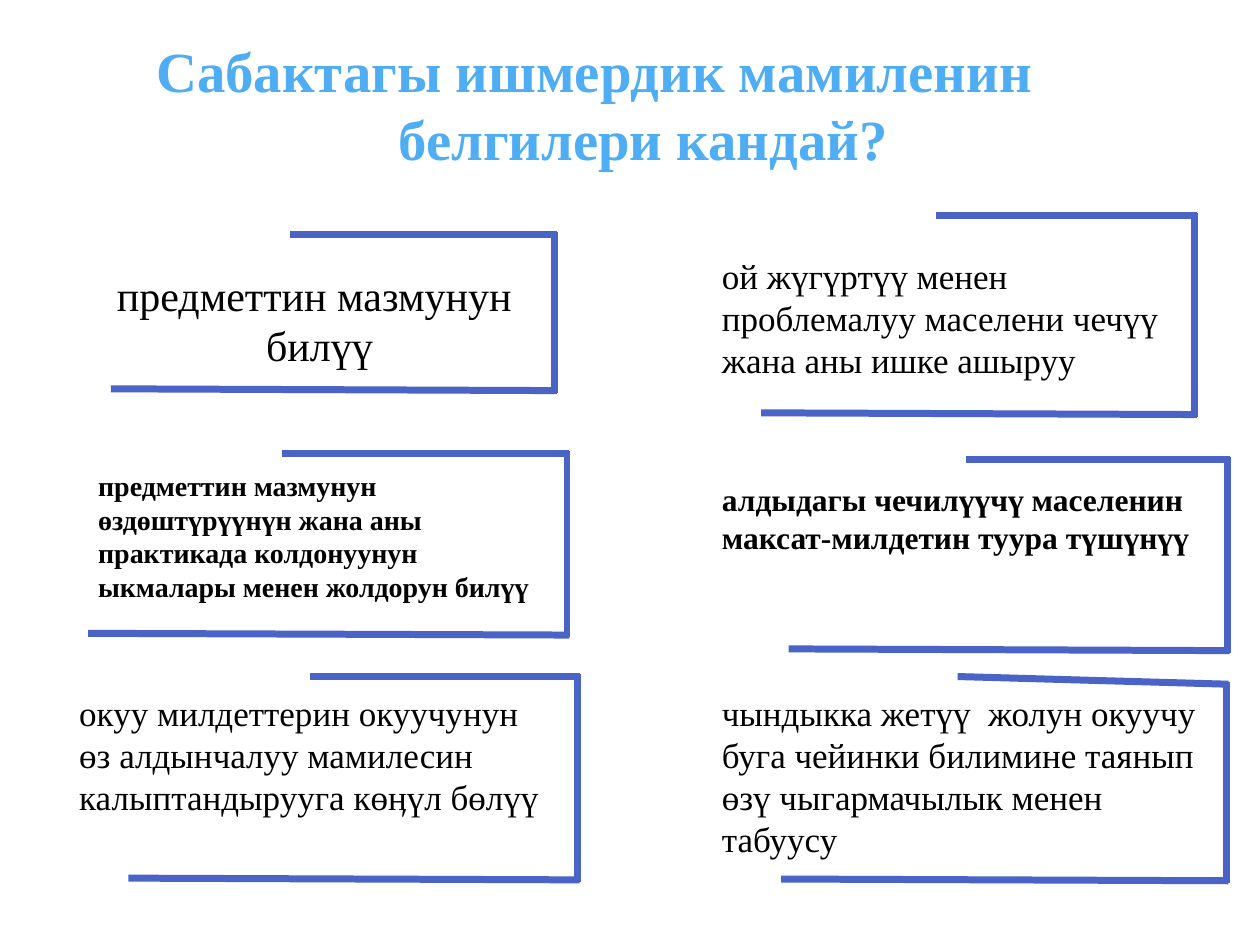
import pptx
import pptx.dml.color
import pptx.enum.shapes
import pptx.enum.text
import pptx.oxml
import pptx.oxml.ns
import pptx.util

Pt = pptx.util.Pt
RGB = pptx.dml.color.RGBColor
ALIGN = pptx.enum.text.PP_ALIGN
ANCHOR = pptx.enum.text.MSO_ANCHOR
FIT = pptx.enum.text.MSO_AUTO_SIZE

SKY = RGB(0x4F, 0xAD, 0xF3)
BLUE = RGB(0x49, 0x63, 0xC7)
BLACK = RGB(0, 0, 0)


class Deck:
    font = "Times New Roman"
    weight = 4
    lap = 1.4  # how far the lines of a frame run past its corners
    drop = 1   # slope of the bottom line

    def __init__(self, wide, high):
        self.prs = pptx.Presentation()
        self.prs.slide_width, self.prs.slide_height = Pt(wide), Pt(high)
        self.slide = self.prs.slides.add_slide(self.prs.slide_layouts[6])

    def text(self, box, lines, size, color=BLACK, bold=False,
             align=ALIGN.LEFT, wrap=True):
        shape = self.slide.shapes.add_textbox(*map(Pt, box))
        frame = shape.text_frame
        frame.word_wrap = wrap
        frame.auto_size = FIT.SHAPE_TO_FIT_TEXT
        for i, line in enumerate(lines):
            para = frame.paragraphs[0] if i == 0 else frame.add_paragraph()
            para.alignment = align
            run = para.add_run()
            run.text = line
            run.font.name = self.font
            run.font.size = Pt(size)
            run.font.bold = bold
            run.font.color.rgb = color
        return frame

    def title(self, box, lines, size, color):
        frame = self.text(box, lines, size, color, True, ALIGN.CENTER)
        frame.auto_size = FIT.NONE
        frame.vertical_anchor = ANCHOR.MIDDLE
        # Lift the block, and set the second line to the right of the first
        frame.margin_bottom = Pt(18)
        frame.margin_right = Pt(48)
        frame.paragraphs[1]._p.get_or_add_pPr().set("marL", str(Pt(56)))

    def line(self, group, *ends):
        kind = pptx.enum.shapes.MSO_CONNECTOR.STRAIGHT
        line = group.shapes.add_connector(kind, *map(Pt, ends))
        line.line.color.rgb = BLUE
        line.line.width = Pt(self.weight)
        props = line._element.spPr
        props.append(pptx.oxml.parse_xml(
            "<a:effectLst %s/>" % pptx.oxml.ns.nsdecls("a")))

    def frame(self, low, high, right, top, base, tilt=0):
        """Open frame: low and high are where its bottom and top lines start."""
        group = self.slide.shapes.add_group_shape()
        edge, peak = right + self.lap, top + tilt
        self.line(group, low, base - self.drop, edge, base)
        self.line(group, right, base + self.lap, right, peak - self.lap)
        self.line(group, high, top, edge, peak)


def main():
    deck = Deck(720, 540)

    # Title
    deck.title((36, 21.6, 648, 90),
               ["Сабактагы ишмердик мамиленин", "белгилери кандай?"],
               32.4, SKY)

    # Frames: low, high, right, top, base, tilt
    for spec in [
        (50.4, 161.3, 324, 259.2, 362.9),
        (63.4, 165.6, 316.8, 133.9, 223.2),
        (450.7, 552.2, 701.3, 262.8, 371.8),
        (434.9, 535, 682.6, 123.1, 236.9),
        (446.4, 547.2, 700.6, 386.6, 503.3, 4.4),
        (73.4, 177.1, 329.8, 386.6, 502.8),
    ]:
        deck.frame(*spec)

    # Left column
    deck.text((58.3, 150.5, 242.6, 65.5), ["предметтин мазмунун", " билүү"],
              24, align=ALIGN.CENTER, wrap=False)
    deck.text((49, 264.2, 267.8, 85),
              ["предметтин мазмунун өздөштүрүүнүн жана аны практикада "
               "колдонуунун ыкмалары менен жолдорун билүү"], 16, bold=True)
    deck.text((38.2, 391.7, 285.8, 80),
              ["окуу милдеттерин окуучунун өз алдынчалуу мамилесин "
               "калыптандырууга көӊүл бөлүү"], 20)

    # Right column
    left = 405.4
    deck.text((left, 141.8, 269.3, 80),
              ["ой жүгүртүү менен проблемалуу маселени чечүү жана аны "
               "ишке ашыруу"], 20)
    deck.text((left, 270.7, 289.4, 51),
              ["алдыдагы чечилүүчү маселенин максат-милдетин туура "
               "түшүнүү"], 18, bold=True)
    deck.text((left, 391.7, 293.8, 104.4),
              ["чындыкка жетүү  жолун окуучу буга чейинки билимине таянып "
               "өзү чыгармачылык менен  табуусу"], 20)

    deck.prs.save("out.pptx")


if __name__ == "__main__":
    main()
